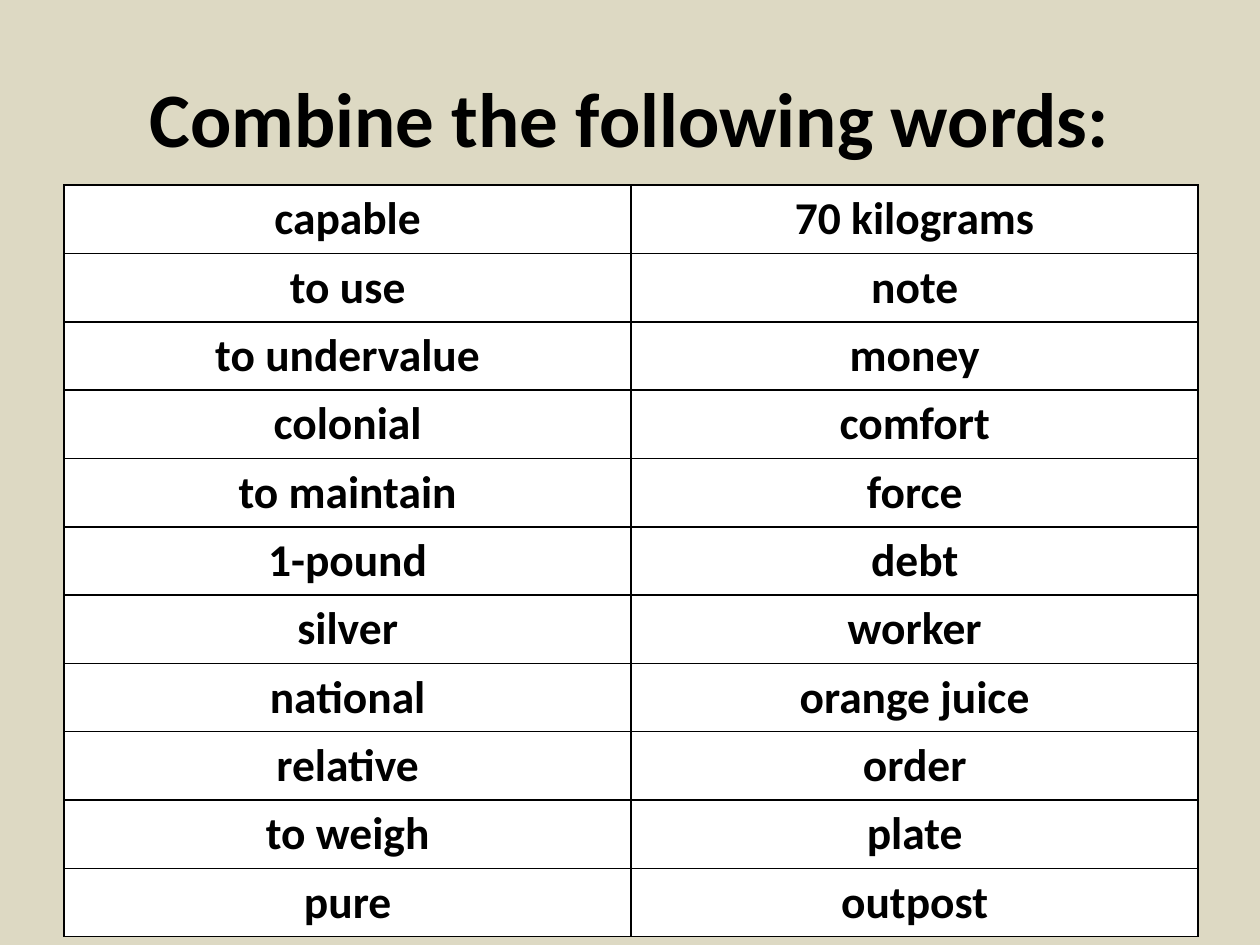
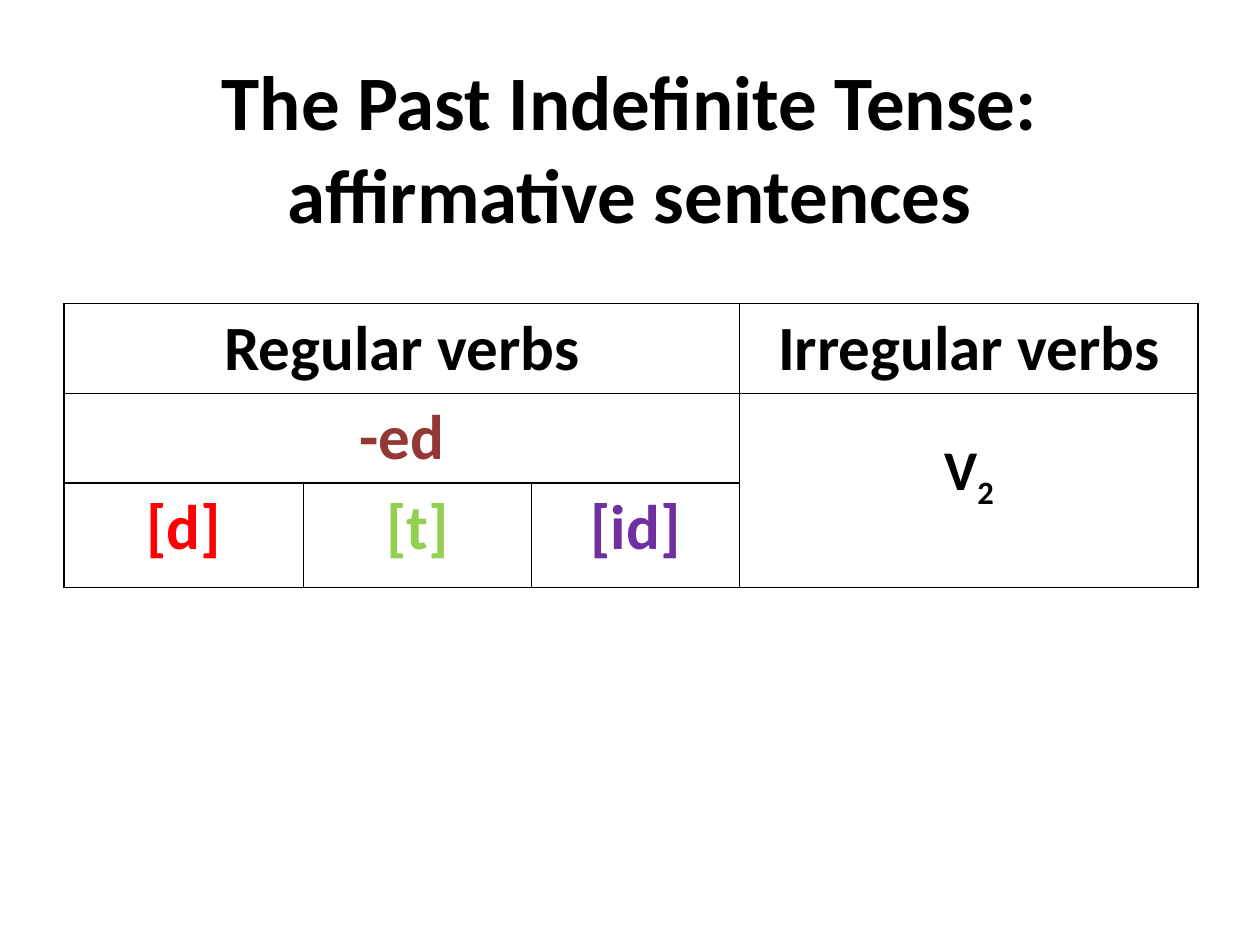
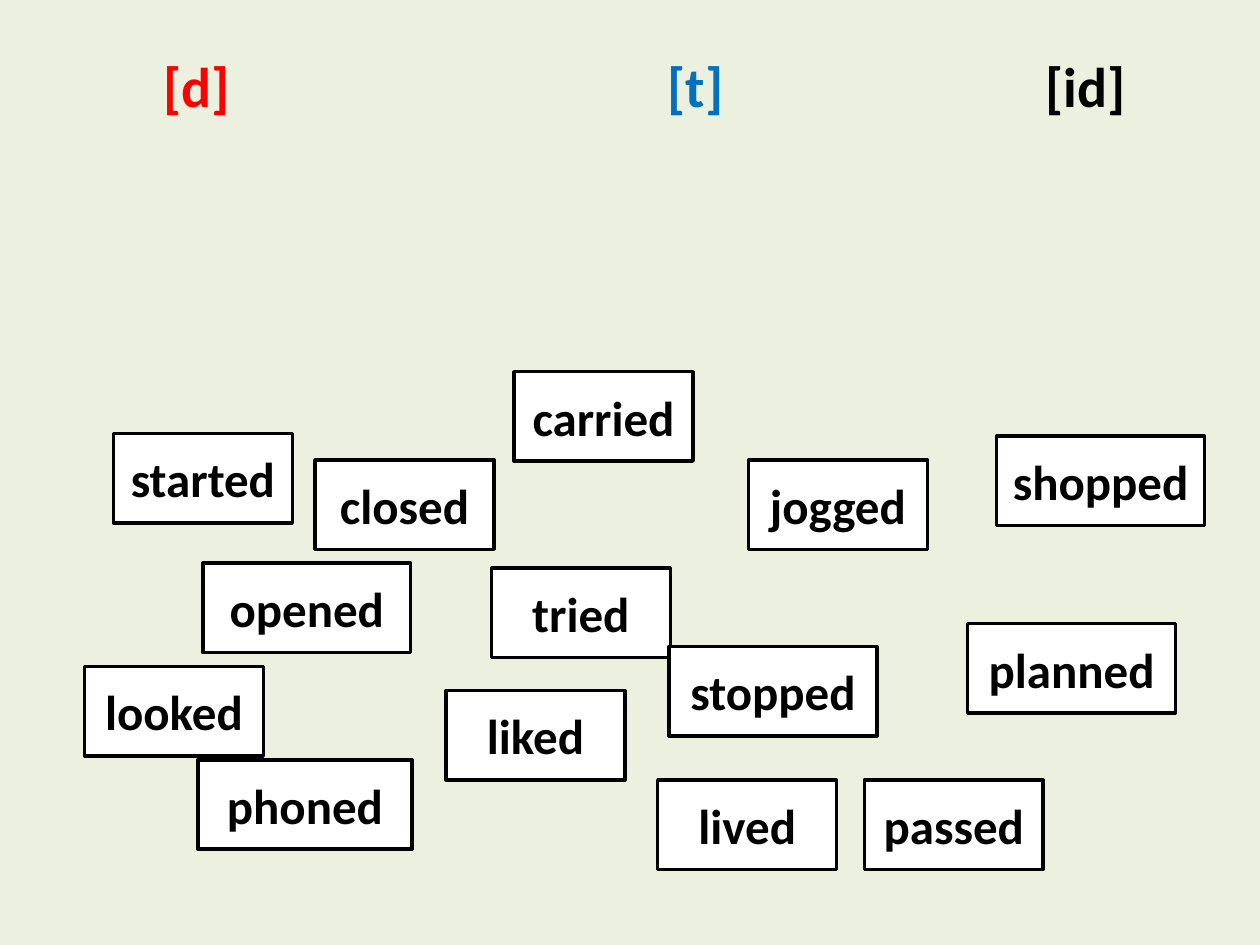
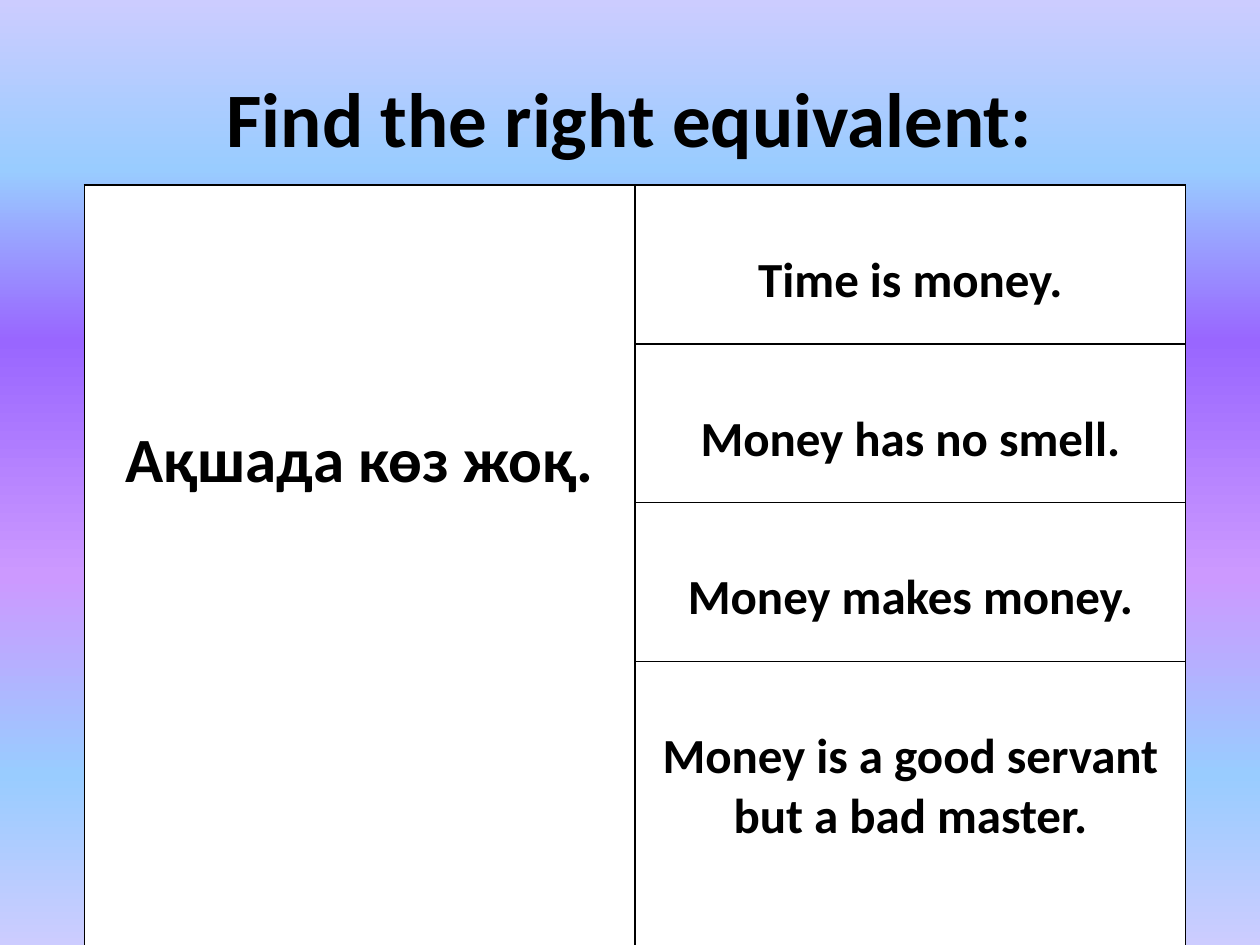
from lxml import etree
from pptx import Presentation
from pptx.dml.color import RGBColor
from pptx.enum.shapes import MSO_SHAPE
from pptx.enum.text import MSO_ANCHOR, PP_ALIGN
from pptx.oxml.ns import qn
from pptx.util import Inches, Pt

RECT = MSO_SHAPE.RECTANGLE
MIDDLE = MSO_ANCHOR.MIDDLE
LEFT, CENTER = PP_ALIGN.LEFT, PP_ALIGN.CENTER
FONT = "Calibri"
BLACK, WHITE, RED = "000000", "FFFFFF", "FF0000"
TITLE_ONLY, TITLE_AND_BODY = 5, 1


def rgb(value):
    return RGBColor.from_string(value)


def write(tf, text, size=28, color=BLACK, align=CENTER, baseline=None):
    p = tf.paragraphs[0]
    p.alignment = align
    for i, line in enumerate(text.split("\n")):
        if i:
            p.add_line_break()
        r = p.add_run()
        r.text = line
        r.font.name = FONT
        r.font.size = Pt(size)
        r.font.bold = True
        r.font.color.rgb = rgb(color)
        if baseline:
            r.font._element.set("baseline", str(baseline))


prs = Presentation()
prs.slide_width, prs.slide_height = Inches(10), Inches(7.5)
col, row = prs.slide_width / 100, prs.slide_height / 75

pages = [
    ("Combine the following words:", 12.5, "DDD9C3"),
    ("The Past Indefinite Tense:\naffirmative sentences", 17.2, WHITE),
    (None, 0, "EBF1DE"),
    ("Find the right equivalent:", 12.5, None),
]
for title, height, background in pages:
    s = prs.slides.add_slide(prs.slide_layouts[TITLE_ONLY if title else TITLE_AND_BODY])
    sp = s.shapes.title
    if title:
        sp.left, sp.top = int(5 * col), int(3 * row)
        sp.width, sp.height = int(90 * col), int(height * row)
        sp.text_frame.vertical_anchor = MIDDLE
        write(sp.text_frame, title, size=44)
    else:
        sp.element.getparent().remove(sp.element)
    fill = s.background.fill
    if background:
        fill.solid()
        fill.fore_color.rgb = rgb(background)
    else:
        fill.gradient()
        fill.gradient_angle = 270
        stops = s.element.find(".//" + qn("a:gsLst"))
        stops.clear()
        for share, color in [(0, "CCCCFF"), (18, "99CCFF"), (36, "9966FF"),
                             (61, "CC99FF"), (82, "99CCFF"), (100, "CCCCFF")]:
            stop = etree.SubElement(stops, qn("a:gs"), pos=str(share * 1000))
            etree.SubElement(stop, qn("a:srgbClr"), val=color)
words_slide, tense_slide, sounds_slide, proverb_slide = prs.slides

pairs = [
    ("capable", "70 kilograms"),
    ("to use", "note"),
    ("to undervalue", "money"),
    ("colonial", "comfort"),
    ("to maintain", "force"),
    ("1-pound", "debt"),
    ("silver", "worker"),
    ("national", "orange juice"),
    ("relative", "order"),
    ("to weigh", "plate"),
    ("pure", "outpost"),
]
proverbs = [
    "Time is money.",
    "Money has no smell.",
    "Money makes money.",
    "Money is a good servant but a bad master.",
]
word_cells = [(y, x, text, 26, BLACK, 0.5)
              for y, pair in enumerate(pairs) for x, text in enumerate(pair)]
tense_cells = [
    (0, 0, "Regular verbs", 36, BLACK, 0.5),
    (0, 3, "Irregular verbs", 36, BLACK, 0.5),
    (1, 0, "-ed", 36, "953735", 0.5),
    (1, 3, "V", 32, BLACK, 3.5),
    (2, 0, "[d]", 36, RED, 0.5),
    (2, 1, "[t]", 36, "92D050", 0.5),
    (2, 2, "[id]", 36, "7030A0", 0.5),
]
proverb_cells = [(0, 0, "Ақшада көз жоқ.", 36, BLACK, 18.8)]
proverb_cells += [(y, 1, text, 28, BLACK, 5.2) for y, text in enumerate(proverbs)]

tables = [
    (words_slide, 5.1, 14.7, [45] * 2, [5.34] * len(pairs), [], word_cells),
    (tense_slide, 5.1, 24.1, [19, 18.1, 16.5, 36.4], [7, 7, 8.3],
     [(0, 0, 0, 2), (1, 0, 1, 2), (1, 3, 2, 3)], tense_cells),
    (proverb_slide, 6.7, 14.7, [43.7] * 2, [12.6] * 3 + [15], [(0, 0, 3, 0)], proverb_cells),
]
for s, left, top, widths, heights, merges, cells in tables:
    table = s.shapes.add_table(len(heights), len(widths), int(left * col), int(top * row),
                               int(sum(widths) * col), int(sum(heights) * row)).table
    table.first_row = table.horz_banding = False
    for column, width in zip(table.columns, widths):
        column.width = int(width * col)
    for line, height in zip(table.rows, heights):
        line.height = int(height * row)
    for cell in table.iter_cells():
        tcPr = cell._tc.get_or_add_tcPr()
        for side in ("lnL", "lnR", "lnT", "lnB"):
            ln = etree.SubElement(tcPr, qn("a:" + side), w=str(Pt(1)))
            solid = etree.SubElement(ln, qn("a:solidFill"))
            etree.SubElement(solid, qn("a:srgbClr"), val=BLACK)
        cell.fill.solid()
        cell.fill.fore_color.rgb = rgb(WHITE)
    for y1, x1, y2, x2 in merges:
        table.cell(y1, x1).merge(table.cell(y2, x2))
    for y, x, text, size, color, inset in cells:
        cell = table.cell(y, x)
        cell.margin_top = int(inset * row)
        write(cell.text_frame, text, size=size, color=color)
        if text == "V":
            write(cell.text_frame, "2", size=size, baseline=-25000)

sp = sounds_slide.placeholders[1]
sp.left, sp.top = int(2 * col), int(3.6 * row)
sp.width, sp.height = int(96.1 * col), int(69.3 * row)
tf = sp.text_frame
p = tf.paragraphs[0]
p.space_before = Pt(0)
pPr = p._p.get_or_add_pPr()
pPr.set("marL", "0")
pPr.set("indent", "0")
etree.SubElement(pPr, qn("a:buNone"))
body_style = prs.slide_master.element.find(".//" + qn("p:bodyStyle"))
for level in (pPr, body_style.find(qn("a:lvl1pPr"))):
    level.set("defTabSz", str(int(10 * col)))
for tabs, sound, color in [(1, "[d]", RED), (4, "[t]", "0070C0"), (3, "[id]", BLACK)]:
    write(tf, "\t" * tabs + sound, size=32, color=color, align=LEFT)

cards = [
    ("started", 9, 34.4, 14.2),
    ("passed", 68.6, 61.9, 14.2),
    ("opened", 16.1, 44.7, 16.5),
    ("looked", 6.7, 52.9, 14.2),
    ("closed", 25, 36.5, 14.2),
    ("lived", 52.2, 61.9, 14.2),
    ("phoned", 15.7, 60.3, 17),
    ("liked", 35.4, 54.8, 14.2),
    ("tried", 39, 45.1, 14.2),
    ("carried", 40.8, 29.5, 14.2),
    ("stopped", 53.1, 51.3, 16.5),
    ("jogged", 59.4, 36.5, 14.2),
    ("planned", 76.8, 49.5, 16.5),
    ("shopped", 79.1, 34.6, 16.5),
]
for word, left, top, width in cards:
    sp = sounds_slide.shapes.add_shape(RECT, int(left * col), int(top * row),
                                       int(width * col), int(7.1 * row))
    sp.shadow.inherit = False
    sp.fill.solid()
    sp.fill.fore_color.rgb = rgb(WHITE)
    sp.line.color.rgb = rgb(BLACK)
    sp.line.width = Pt(2)
    sp.text_frame.word_wrap = True
    sp.text_frame.vertical_anchor = MIDDLE
    write(sp.text_frame, word)

prs.save("out.pptx")
